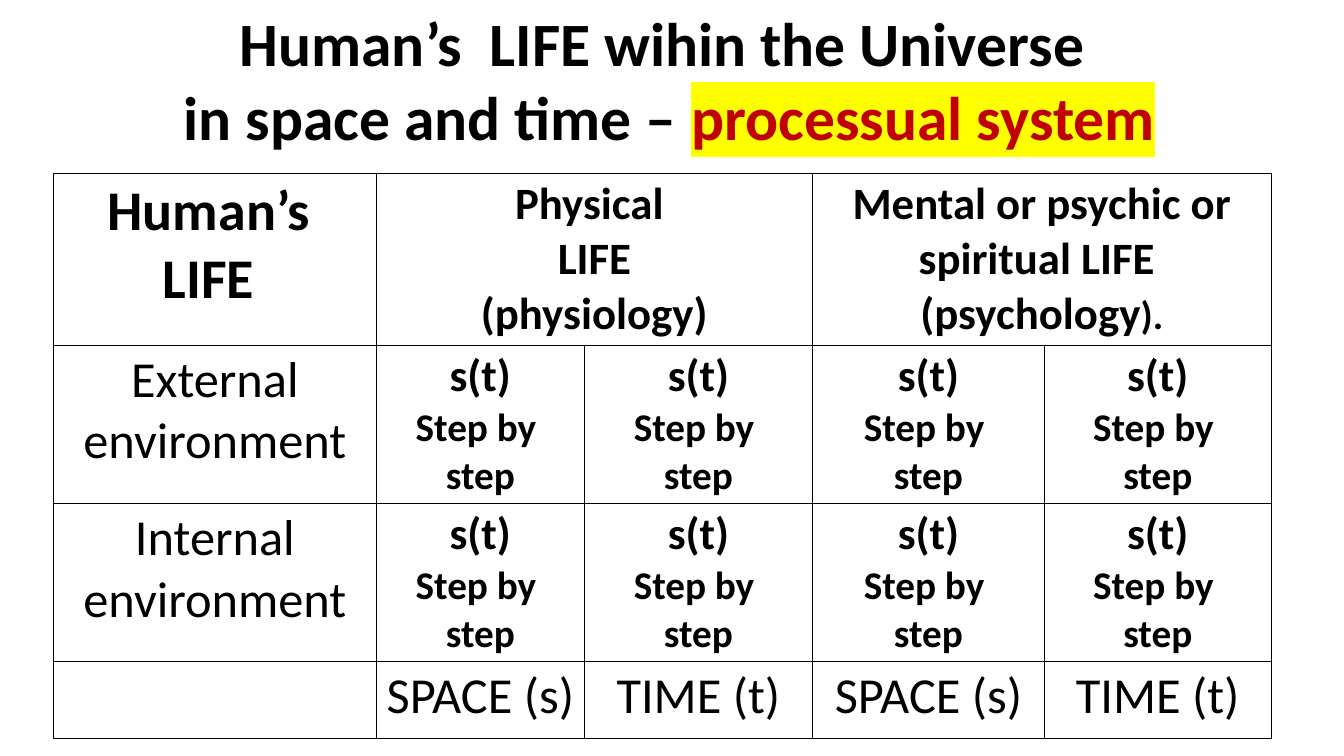
from lxml.etree import SubElement
from pptx import Presentation
from pptx.dml.color import RGBColor
from pptx.enum.text import MSO_AUTO_SIZE as AutoSize, PP_ALIGN as Align
from pptx.oxml import parse_xml
from pptx.oxml.ns import nsdecls, qn
from pptx.util import Pt

BLACK = RGBColor(0x00, 0x00, 0x00)
RED = RGBColor(0xC0, 0x00, 0x00)
YELLOW = RGBColor(0xFF, 0xFF, 0x00)

COLUMN_WIDTHS = [230.6, 148.6, 163, 165.6, 162]
ROW_HEIGHTS = [122.8, 113, 113, 55]
STEPS = [("s(t)", 32, True), ("Step by ", 28, True), ("step", 28, True)]
SCALES = [[("SPACE (s)", 36, False)], [("TIME (t)", 36, False)]]
HEADER = [
    [("Human’s ", 40, True), ("LIFE ", 40, True)],
    [("Physical ", 32, True), ("LIFE", 32, True), ("(physiology)", 32, True)],
    [],
    [("Mental or psychic or spiritual LIFE  (psychology", 32, True)],
    [],
]
ROWS = [
    HEADER,
    [[("External environment", 36, False)]] + [STEPS] * 4,
    [[("Internal", 36, False), ("environment", 36, False)]] + [STEPS] * 4,
    [[]] + SCALES * 2,
]


class SlideBuilder:
    """Draw centred text and ruled tables on one slide in a shared style."""

    def __init__(self, slide, font_name="Calibri", color=BLACK):
        self.slide = slide
        self.font_name = font_name
        self.color = color

    def fill_text(self, frame, lines):
        for index, (text, size, bold) in enumerate(lines):
            paragraph = frame.paragraphs[0] if index == 0 else frame.add_paragraph()
            paragraph.alignment = Align.CENTER
            paragraph.font.name = self.font_name
            paragraph.font.size = Pt(size)
            paragraph.font.bold = bold
            paragraph.font.color.rgb = self.color
            paragraph.add_run().text = text

    def text_box(self, left, top, width, height, lines):
        box = self.slide.shapes.add_textbox(Pt(left), Pt(top), Pt(width), Pt(height))
        frame = box.text_frame
        frame.word_wrap = True
        frame.auto_size = AutoSize.SHAPE_TO_FIT_TEXT
        self.fill_text(frame, lines)
        return frame

    def highlight(self, run, color, background):
        run.font.color.rgb = color
        mark = SubElement(run._r.get_or_add_rPr(), qn("a:highlight"))
        SubElement(mark, qn("a:srgbClr")).set("val", str(background))

    def rule(self, cell, width=1):
        properties = cell._tc.get_or_add_tcPr()
        for index, side in enumerate(("lnL", "lnR", "lnT", "lnB")):
            properties.insert(index, parse_xml(
                f'<a:{side} {nsdecls("a")} w="{Pt(width)}"><a:solidFill>'
                f'<a:srgbClr val="{self.color}"/></a:solidFill></a:{side}>'))

    def table(self, left, top, widths, heights, rows):
        table = self.slide.shapes.add_table(
            len(heights), len(widths), Pt(left), Pt(top),
            Pt(sum(widths)), Pt(sum(heights))).table
        table.first_row = table.horz_banding = False
        for column, width in zip(table.columns, widths):
            column.width = Pt(width)
        for row, height, contents in zip(table.rows, heights, rows):
            row.height = Pt(height)
            for cell, lines in zip(row.cells, contents):
                cell.margin_top = cell.margin_bottom = Pt(2.8)
                cell.fill.background()
                self.rule(cell)
                self.fill_text(cell.text_frame, lines)
        return table


def main():
    presentation = Presentation()
    presentation.slide_width, presentation.slide_height = Pt(960), Pt(540)
    builder = SlideBuilder(presentation.slides.add_slide(presentation.slide_layouts[6]))

    title = builder.text_box(0, 0, 946.8, 113.8, [
        ("Human’s  LIFE wihin the Universe", 44, True),
        (" in space and time – ", 44, True),
    ])
    system = title.paragraphs[1].add_run()
    system.text = "processual system"
    builder.highlight(system, RED, YELLOW)

    table = builder.table(38.2, 123.8, COLUMN_WIDTHS, ROW_HEIGHTS, ROWS)
    for column in (1, 3):
        table.cell(0, column).merge(table.cell(0, column + 1))
    ending = table.cell(0, 3).text_frame.paragraphs[0].add_run()
    ending.text = ")."
    ending.font.size = Pt(28)

    presentation.save("out.pptx")


if __name__ == "__main__":
    main()
